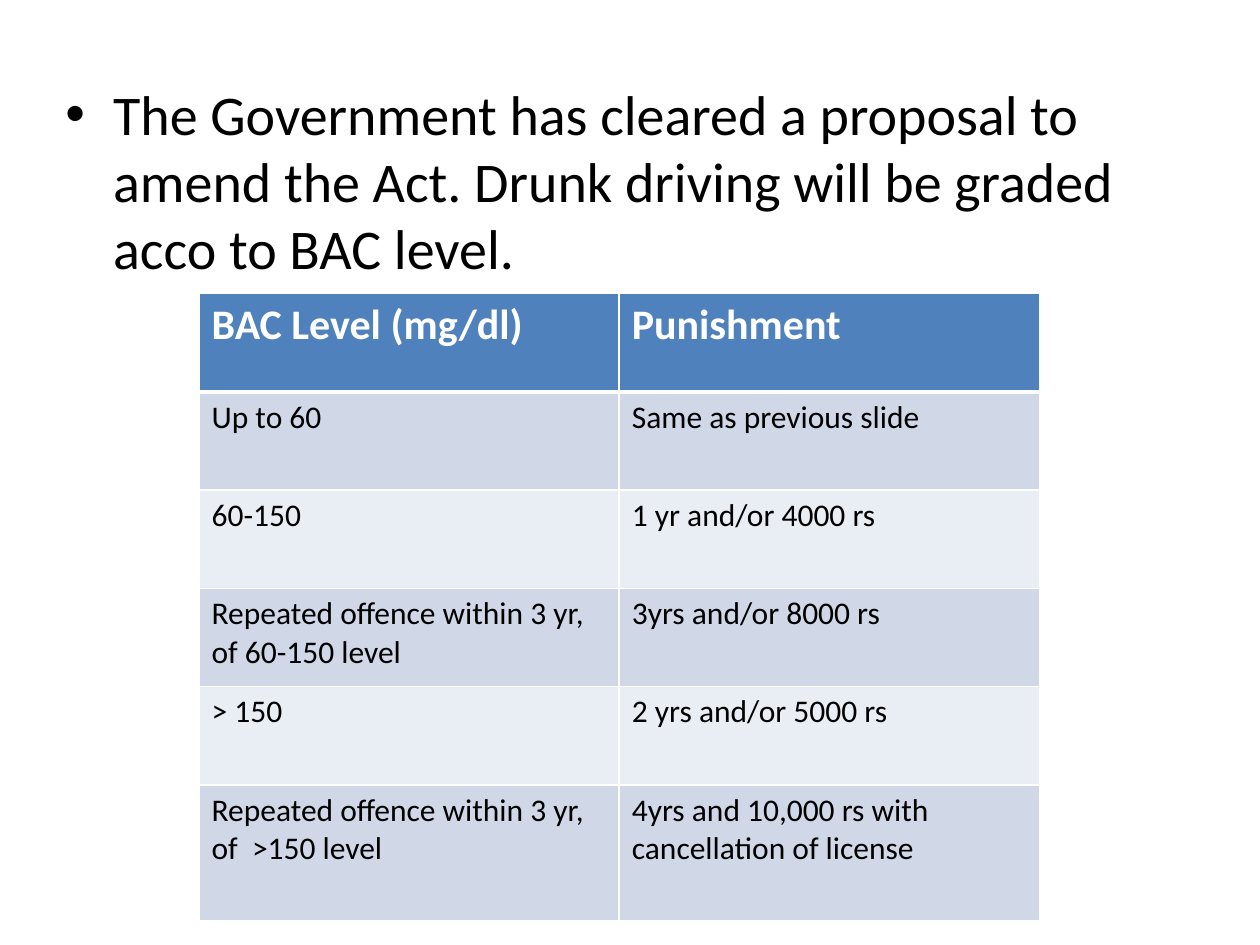
from pptx import Presentation
from pptx.util import Inches, Pt
from pptx.dml.color import RGBColor
from pptx.oxml.ns import qn
from lxml.etree import SubElement as Sub


def paint(fill, color):
    fill.solid()
    fill.fore_color.rgb = RGBColor.from_string(color)


def write(para, text, size, color, bold=False):
    run = para.add_run()
    run.text = text
    font = run.font
    font.name, font.size, font.bold = "Calibri", Pt(size), bold
    paint(font.fill, color)


deck = Presentation()
deck.slide_width, deck.slide_height = Inches(10), Inches(7.5)
slide = deck.slides.add_slide(deck.slide_layouts[6])

# Bulleted statement
box = slide.shapes.add_textbox(Inches(0.42), Inches(0.58), Inches(9), Inches(6.12))
frame = box.text_frame
frame.word_wrap = True
para = frame.paragraphs[0]
write(para, "The Government has cleared a proposal to amend the Act. "
      "Drunk driving will be graded acco to BAC level.", 32, "000000")
props = para._p.get_or_add_pPr()
props.set("marL", str(Inches(0.38)))
props.set("indent", str(-Inches(0.38)))
Sub(Sub(props, qn("a:spcBef")), qn("a:spcPct"), val="20000")
Sub(props, qn("a:buFont"), typeface="Arial")
Sub(props, qn("a:buChar"), char="•")

# Penalty table
rows = [
    ("BAC Level (mg/dl)", "Punishment"),
    ("Up to 60", "Same as previous slide"),
    ("60-150", "1 yr and/or 4000 rs"),
    ("Repeated offence within 3 yr, of 60-150 level", "3yrs and/or 8000 rs"),
    ("> 150", "2 yrs and/or 5000 rs"),
    ("Repeated offence within 3 yr, of  >150 level",
     "4yrs and 10,000 rs with cancellation of license"),
]
table = slide.shapes.add_table(len(rows), 2, Inches(1.58), Inches(2.33),
                               Inches(6.67), Inches(4.98)).table
for r, texts in enumerate(rows):
    head = r == 0
    last = r == len(rows) - 1
    table.rows[r].height = Inches(1.08 if last else 0.78)
    back = "4F81BD" if head else ("E9EDF4", "D0D8E8")[r % 2]
    for c, text in enumerate(texts):
        cell = table.cell(r, c)
        # White borders, thick between header and body
        for side in ("L", "R", "T", "B"):
            thick = (head and side == "B") or (r == 1 and side == "T")
            line = Sub(cell._tc.get_or_add_tcPr(), qn("a:ln" + side),
                       w=str(Pt(3 if thick else 1)))
            Sub(Sub(line, qn("a:solidFill")), qn("a:srgbClr"), val="FFFFFF")
        paint(cell.fill, back)
        write(cell.text_frame.paragraphs[0], text, 24 if head else 18,
              "FFFFFF" if head else "000000", head)

deck.save("out.pptx")
